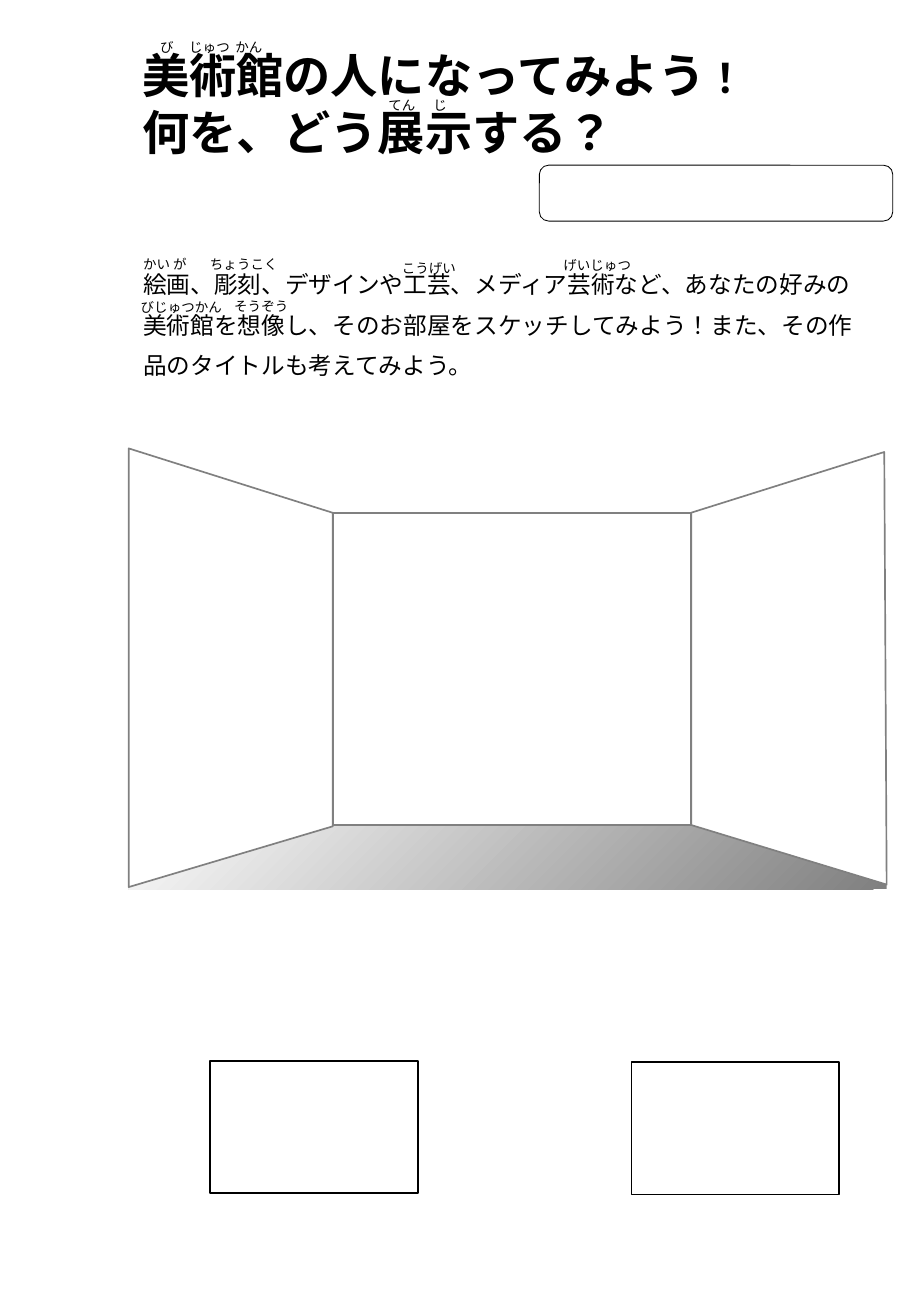
from lxml.etree import SubElement
from pptx import Presentation
from pptx.dml.color import RGBColor
from pptx.enum.lang import MSO_LANGUAGE_ID
from pptx.enum.shapes import MSO_SHAPE
from pptx.enum.text import MSO_ANCHOR, MSO_AUTO_SIZE
from pptx.oxml.ns import qn
from pptx.util import Inches, Pt

FONT = "Noto Sans CJK JP"
BLACK, WHITE, GRAY = "000000", "FFFFFF", "808080"

# Readings above the kanji: text, left, top, width
READINGS = [
    ("び", 1.22, 0.27, 0.35),
    ("じゅつ", 1.46, 0.27, 0.6),
    ("かん", 1.84, 0.27, 0.5),
    ("てん", 3.1, 0.75, 0.5),
    ("じ", 3.47, 0.75, 0.35),
    ("かい が", 1.08, 2.06, 0.58),
    ("ちょうこく", 1.63, 2.06, 0.82),
    ("げいじゅつ", 4.54, 2.07, 0.77),
    ("こうげい", 3.21, 2.09, 0.73),
    ("そうぞう", 1.83, 2.4, 0.82),
    ("びじゅつかん", 1.06, 2.41, 1.01),
]
LEFT_WALL = [(1.06, 7.3), (2.74, 6.8), (2.74, 4.22), (1.06, 3.69)]
RIGHT_WALL = [(7.3, 7.28), (5.69, 6.79), (5.69, 4.22), (7.28, 3.72)]


def color(value):
    return RGBColor.from_string(value)


def place(shape, left, top, width, height):
    shape.left, shape.top = Inches(left), Inches(top)
    shape.width, shape.height = Inches(width), Inches(height)


def style_shape(shape, fill=WHITE, line=GRAY, weight=1):
    shape.shadow.inherit = False
    if fill:
        shape.fill.solid()
        shape.fill.fore_color.rgb = color(fill)
    else:
        shape.fill.background()
    if line:
        shape.line.color.rgb = color(line)
        shape.line.width = Pt(weight)
    else:
        shape.line.fill.background()


def add_panel(page, left, top, width, height, kind=MSO_SHAPE.RECTANGLE, **style):
    panel = page.shapes.add_shape(
        kind, Inches(left), Inches(top), Inches(width), Inches(height))
    style_shape(panel, **style)
    return panel


def add_wall(page, corners):
    points = [(Inches(x), Inches(y)) for x, y in corners]
    builder = page.shapes.build_freeform(*points[0])
    builder.add_line_segments(points[1:], close=True)
    style_shape(builder.convert_to_shape())


def add_floor(page):
    floor = add_panel(page, 1.06, 6.57, 6.24, 0.75, line=None)
    floor.fill.gradient()
    for stop, value in zip(floor.fill.gradient_stops, (WHITE, GRAY)):
        stop.color.rgb = color(value)
    # Radial shading that spreads from the top left corner
    gradient = floor._element.spPr.find(qn("a:gradFill"))
    gradient.remove(gradient.find(qn("a:lin")))
    radial = SubElement(gradient, qn("a:path"), path="circle")
    SubElement(radial, qn("a:fillToRect"), r="100000", b="100000")


def set_frame(shape):
    frame = shape.text_frame
    frame.word_wrap = True
    frame.auto_size = MSO_AUTO_SIZE.NONE
    frame.vertical_anchor = MSO_ANCHOR.TOP
    return frame


def format_para(para, before=0):
    properties = para._p.get_or_add_pPr()
    properties.set("marL", "0")
    properties.set("indent", "0")
    properties.set("algn", "l")
    SubElement(properties, qn("a:buNone"))
    para.line_spacing = 1.0
    para.space_before = Pt(before)
    para.space_after = Pt(0)


def add_span(para, text, size, bold=False):
    span = para.add_run()
    span.text = text
    span.font.size = Pt(size)
    span.font.bold = bold
    span.font.name = FONT
    span.font.language_id = MSO_LANGUAGE_ID.JAPANESE
    span.font.color.rgb = color(BLACK)
    SubElement(span._r.get_or_add_rPr(), qn("a:ea"), typeface=FONT)


def write_lines(shape, lines, gap=0, bold=False):
    """Each line is a list of (text, size) spans."""
    frame = set_frame(shape)
    for index, spans in enumerate(lines):
        para = frame.add_paragraph() if index else frame.paragraphs[0]
        format_para(para, before=gap if index else 0)
        for text, size in spans:
            add_span(para, text, size, bold=bold)


def add_reading(page, text, left, top, width):
    box = page.shapes.add_textbox(
        Inches(left), Inches(top), Inches(width), Inches(0.24))
    write_lines(box, [[(text, 8)]])


def main():
    deck = Presentation()
    deck.slide_width, deck.slide_height = Inches(7.5), Inches(10.83)
    page = deck.slides.add_slide(deck.slide_layouts[1])

    # Title and task
    title, task = page.placeholders
    place(title, 1.07, 0.33, 6.35, 1.04)
    write_lines(title, [
        [("美術館の人になってみよう", 28), ("！", 24)],
        [("何を、どう展示する？", 28)],
    ], bold=True)
    place(task, 1.08, 2.17, 6.22, 1.01)
    write_lines(task, [
        [("絵画、彫刻、デザインや工芸、メディア芸術など、あなたの好みの", 14)],
        [("美術館を想像し、そのお部屋をスケッチしてみよう！また、その作", 14)],
        [("品のタイトルも考えてみよう。", 14)],
    ], gap=7.3)

    # Gallery room
    add_floor(page)
    add_panel(page, 2.74, 4.22, 2.95, 2.57)
    add_wall(page, RIGHT_WALL)
    add_wall(page, LEFT_WALL)

    # Boxes for the work titles and the name
    add_panel(page, 1.73, 8.73, 1.71, 1.09, line=BLACK)
    add_panel(page, 5.2, 8.74, 1.71, 1.09, line=BLACK)
    add_panel(page, 4.44, 1.36, 2.91, 0.46, kind=MSO_SHAPE.ROUNDED_RECTANGLE,
              fill=None, line=BLACK, weight=0.5)

    # Readings
    for reading in READINGS:
        add_reading(page, *reading)

    deck.save("out.pptx")


if __name__ == "__main__":
    main()
